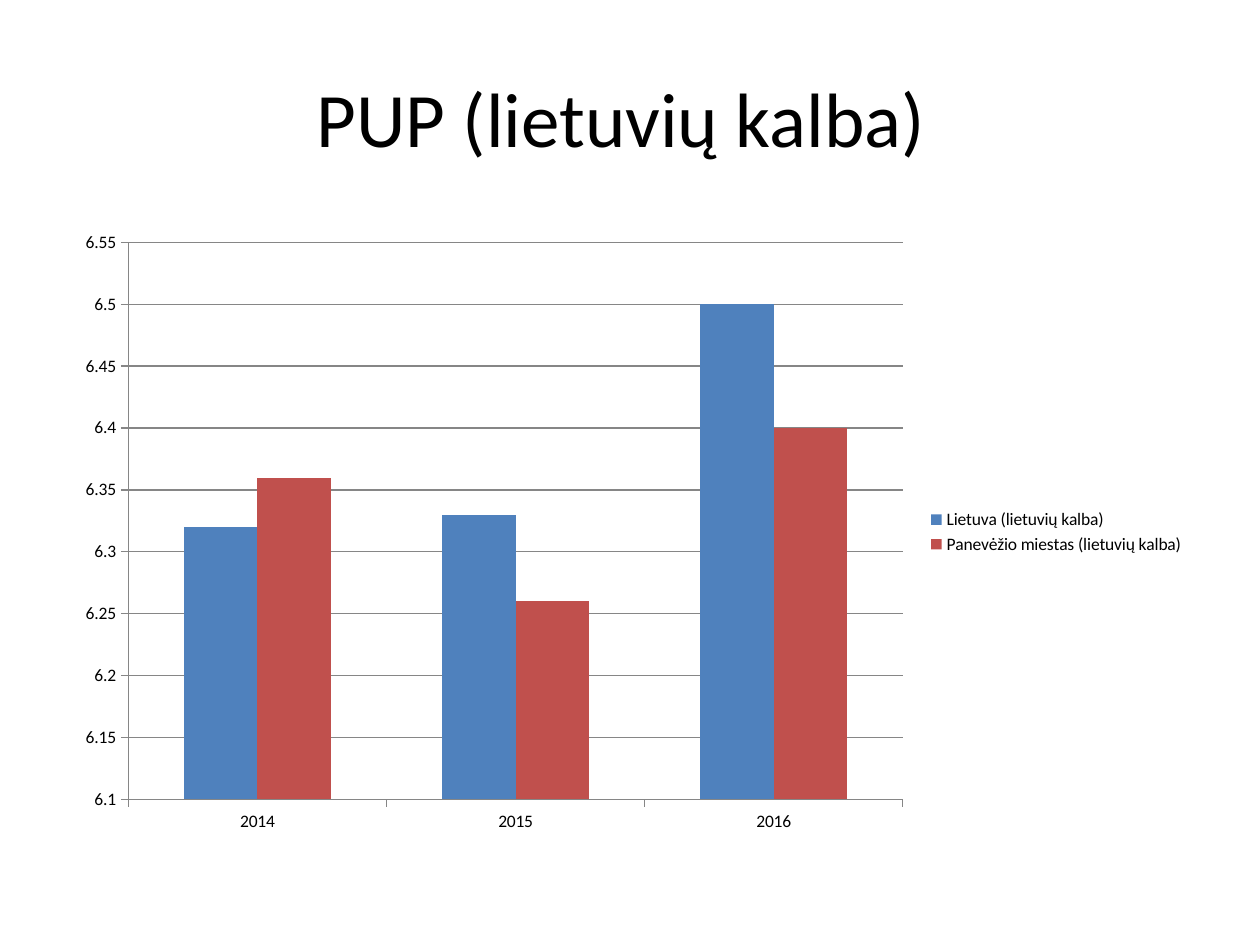
from dataclasses import dataclass

from pptx import Presentation
from pptx import util as u
from pptx.chart import data as chart_data
from pptx.dml import color
from pptx.enum import chart as chart_enum
from pptx.enum import text

PX = u.Inches(1) / 126


@dataclass(frozen=True)
class Theme:
    font: str = "Calibri"
    ink: str = "000000"
    axis: str = "868686"
    background: str = "FFFFFF"
    series: tuple = ("4F81BD", "C0504D")
    title_size: int = 44
    chart_size: int = 10


def px(length):
    return u.Emu(round(length * PX))


def rgb(value):
    return color.RGBColor.from_string(value)


class SlideBuilder:
    def __init__(self, slide, theme):
        self.slide = slide
        self.theme = theme
        fill = slide.background.fill
        fill.solid()
        fill.fore_color.rgb = rgb(theme.background)

    def style_font(self, font, size):
        font.name = self.theme.font
        font.size = u.Pt(size)
        font.color.rgb = rgb(self.theme.ink)

    def style_line(self, line):
        line.color.rgb = rgb(self.theme.axis)
        line.width = u.Pt(0.75)

    def title(self, words, left, top, width, height):
        shape = self.slide.shapes.add_textbox(*map(px, (left, top, width, height)))
        frame = shape.text_frame
        frame.word_wrap = True
        frame.vertical_anchor = text.MSO_ANCHOR.MIDDLE
        paragraph = frame.paragraphs[0]
        paragraph.alignment = text.PP_ALIGN.CENTER
        run = paragraph.add_run()
        run.text = words
        self.style_font(run.font, self.theme.title_size)

    def column_chart(self, categories, series, left, top, width, height):
        data = chart_data.CategoryChartData()
        data.categories = categories
        for name, values in series.items():
            data.add_series(name, values)
        chart = self.slide.shapes.add_chart(
            chart_enum.XL_CHART_TYPE.COLUMN_CLUSTERED,
            *map(px, (left, top, width, height)), data).chart
        self.style_font(chart.font, self.theme.chart_size)
        chart.has_title = False
        chart.has_legend = True
        chart.legend.position = chart_enum.XL_LEGEND_POSITION.RIGHT
        chart.legend.include_in_layout = False

        plot = chart.plots[0]
        plot.gap_width = 150
        plot.vary_by_categories = False
        for column, fill_color in zip(plot.series, self.theme.series):
            column.format.fill.solid()
            column.format.fill.fore_color.rgb = rgb(fill_color)

        for axis in (chart.category_axis, chart.value_axis):
            axis.major_tick_mark = chart_enum.XL_TICK_MARK.OUTSIDE
            axis.minor_tick_mark = chart_enum.XL_TICK_MARK.NONE
            self.style_line(axis.format.line)
        value_axis = chart.value_axis
        value_axis.minimum_scale = 6.1
        value_axis.maximum_scale = 6.55
        value_axis.major_unit = 0.05
        value_axis.has_major_gridlines = True
        self.style_line(value_axis.major_gridlines.format.line)


def main():
    presentation = Presentation()
    presentation.slide_width = px(1260)
    presentation.slide_height = px(945)
    slide = presentation.slides.add_slide(presentation.slide_layouts[6])
    builder = SlideBuilder(slide, Theme())
    builder.title("PUP (lietuvių kalba) ", 63, 38, 1134, 158)
    builder.column_chart(
        ["2014", "2015", "2016"],
        {
            "Lietuva (lietuvių kalba)": (6.32, 6.33, 6.5),
            "Panevėžio miestas (lietuvių kalba)": (6.36, 6.26, 6.4),
        },
        63, 220, 1134, 624)
    presentation.save("out.pptx")


if __name__ == "__main__":
    main()
